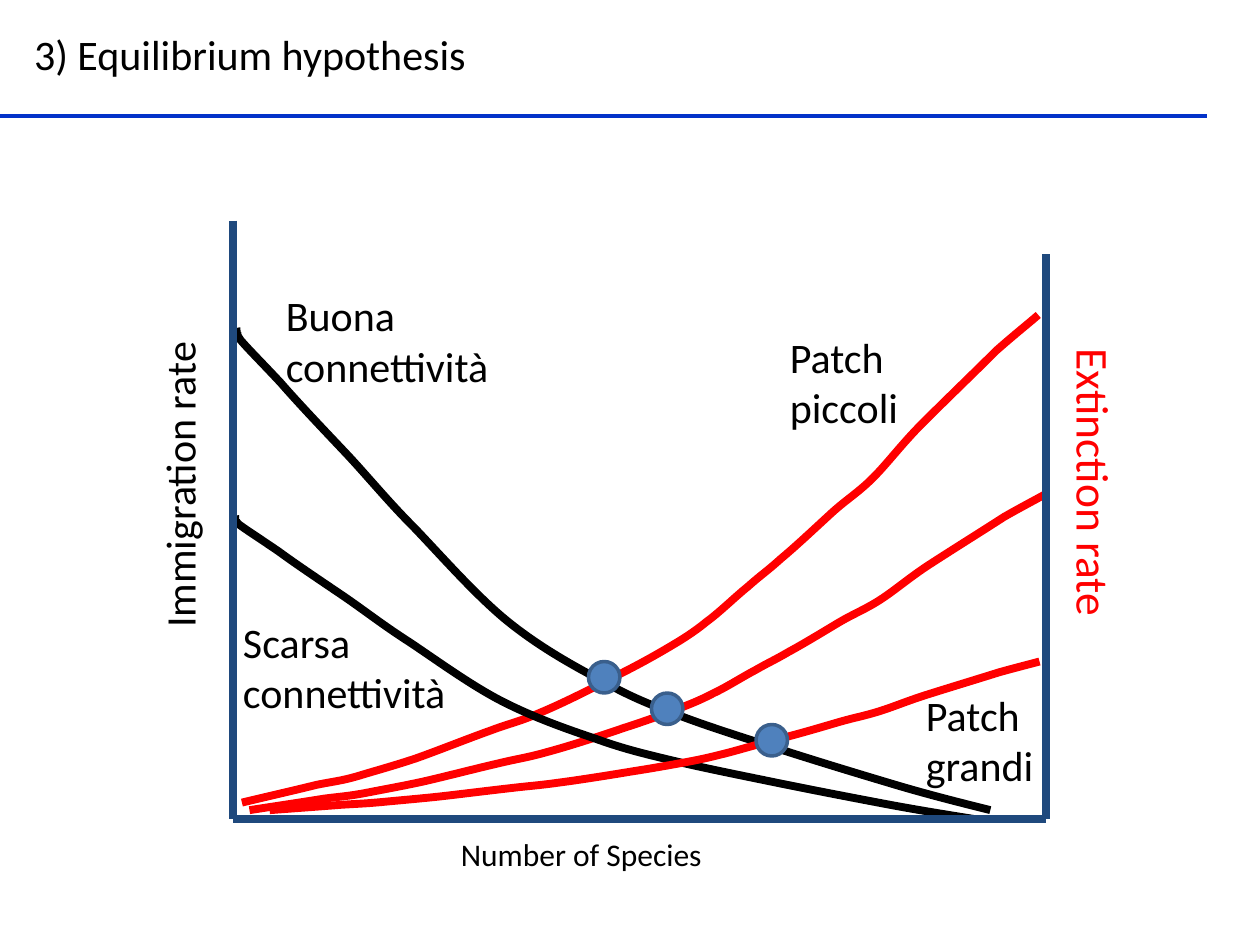
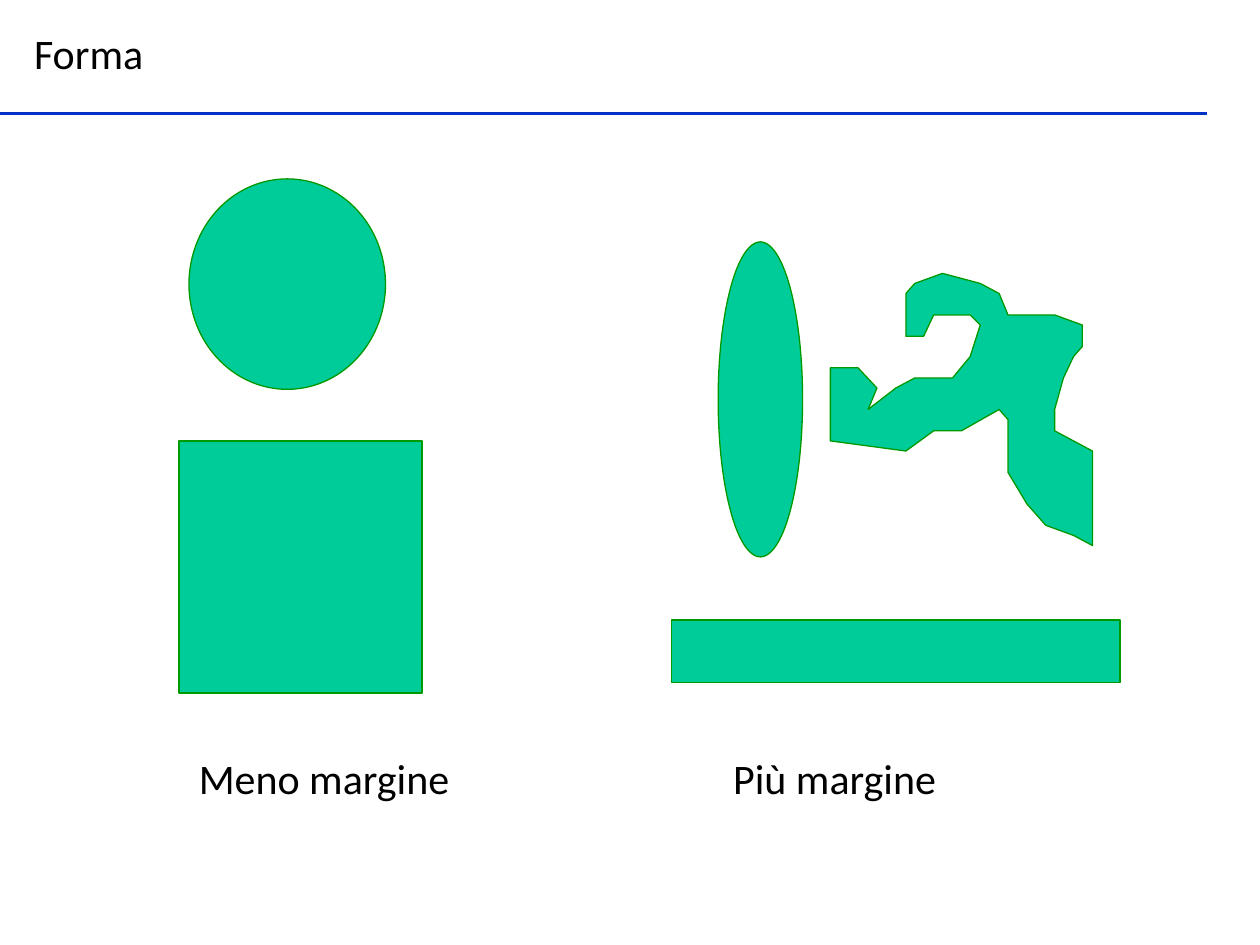
from dataclasses import dataclass
from typing import NamedTuple

from lxml import etree
from pptx import Presentation
from pptx import util as u
from pptx.dml.color import RGBColor
from pptx.enum import shapes, text
from pptx.oxml import ns

PX = 9144


@dataclass(frozen=True)
class Theme:
    font: str = "Calibri"
    ink: str = "000000"
    red: str = "FF0000"
    rule: str = "0332C9"
    axis: str = "1F497D"
    dot: str = "4F81BD"
    rim: str = "3A5F8C"
    patch: str = "00CC99"
    edge: str = "009900"
    small: int = 18
    main: int = 24
    large: int = 26
    thick: float = 4.5
    mid: float = 2
    thin: float = 0.75


T = Theme()


class Box(NamedTuple):
    x: int
    y: int
    w: int
    h: int


class Label(NamedTuple):
    words: str
    box: Box
    size: int = T.main
    color: str = T.ink
    turn: int = 0


class Curve(NamedTuple):
    knots: list
    box: Box
    color: str


class Form(NamedTuple):
    kind: shapes.MSO_SHAPE
    box: Box


Points = list[tuple[float, float]]
OVAL = shapes.MSO_SHAPE.OVAL
RECT = shapes.MSO_SHAPE.RECTANGLE

RISE = [(0, 386),
        (21, 381), (43, 376), (59, 372), (74, 369), (78, 369), (92, 365),
        (105, 361), (120, 357), (138, 351), (155, 345), (180, 335), (197, 329),
        (213, 323), (220, 322), (236, 315), (253, 308), (279, 295), (296, 286),
        (312, 278), (323, 272), (335, 265), (347, 258), (357, 252), (368, 243),
        (379, 235), (391, 223), (401, 215), (411, 206), (416, 203), (427, 193),
        (438, 184), (455, 168), (467, 157), (479, 146), (488, 141), (500, 129),
        (512, 117), (523, 102), (539, 86), (556, 69), (583, 43), (598, 28),
        (614, 14), (623, 7), (631, 0)]
FALL = [(5, 0),
        (3, 0), (0, 0), (5, 7), (11, 14), (23, 26), (37, 41),
        (50, 56), (69, 76), (87, 95), (105, 114), (121, 134), (143, 156),
        (165, 179), (193, 211), (218, 231), (243, 251), (270, 266), (293, 278),
        (316, 291), (332, 297), (356, 306), (380, 315), (409, 324), (437, 333),
        (465, 342), (498, 352), (525, 360), (552, 368), (576, 374), (600, 380)]

CURVES = [
    Curve(RISE, Box(192, 250, 632, 387), T.red),
    Curve(RISE, Box(198, 392, 632, 251), T.red),
    Curve(FALL, Box(186, 263, 600, 380), T.ink),
    Curve(FALL, Box(185, 412, 588, 238), T.ink),
]
LOW = Curve(RISE, Box(214, 525, 611, 118), T.red)
AXES = [(185, 175, 185, 650), (830, 202, 830, 650), (185, 650, 830, 650)]
NOTES = [
    Label("Number of Species", Box(356, 658, 304, 40), T.small),
    Label("Immigration rate", Box(-4, 337, 292, 50), turn=270),
    Label("Extinction rate", Box(731, 377, 275, 54), T.large, T.red, 90),
    Label("Buona connettività", Box(217, 225, 259, 91)),
    Label("Scarsa connettività", Box(183, 484, 192, 91)),
    Label("Patch piccoli", Box(617, 258, 158, 91)),
    Label("Patch grandi", Box(725, 542, 158, 91)),
]
DOTS = [(467, 525), (517, 550), (600, 575)]

FORMS = [
    Form(OVAL, Box(150, 142, 156, 167)),
    Form(RECT, Box(142, 350, 193, 200)),
    Form(OVAL, Box(570, 192, 67, 250)),
    Form(RECT, Box(533, 492, 356, 50)),
]
BLOB = [(867, 433), (867, 358), (837, 342), (837, 325), (844, 300), (852, 283),
        (859, 275), (859, 258), (837, 250), (815, 250), (800, 250), (793, 233),
        (778, 225), (748, 217), (726, 225), (719, 233), (719, 267), (733, 267),
        (741, 250), (770, 250), (778, 258), (770, 283), (756, 300), (741, 300),
        (726, 300), (711, 308), (689, 325), (696, 308), (681, 292), (659, 292),
        (659, 317), (659, 350), (719, 358), (741, 342), (763, 342), (793, 325),
        (800, 333), (800, 358), (800, 375), (815, 400), (830, 417), (852, 425)]
SIDES = [
    Label("Meno margine", Box(148, 592, 244, 50)),
    Label("Più margine", Box(572, 592, 244, 50)),
]


def emu(*vals: float) -> list[int]:
    return [round(v * PX) for v in vals]


def tint(name: str) -> RGBColor:
    return RGBColor.from_string(name)


def style(shape, fill: str | None, line: str, width: float) -> None:
    shape.shadow.inherit = False
    if fill:
        shape.fill.solid()
        shape.fill.fore_color.rgb = tint(fill)
    else:
        shape.fill.background()
    shape.line.color.rgb = tint(line)
    shape.line.width = u.Pt(width)


def write(frame, words: str, size: int, color: str) -> None:
    frame.text = words
    frame.word_wrap = True
    frame.auto_size = text.MSO_AUTO_SIZE.SHAPE_TO_FIT_TEXT
    para = frame.paragraphs[0]
    para.alignment = text.PP_ALIGN.LEFT
    font = para.runs[0].font
    font.name, font.size = T.font, u.Pt(size)
    font.color.rgb = tint(color)


def label(slide, item: Label) -> None:
    box = slide.shapes.add_textbox(*emu(*item.box))
    box.rotation = item.turn
    write(box.text_frame, item.words, item.size, item.color)


def line(slide, ends: tuple, color: str, width: float) -> None:
    link = slide.shapes.add_connector(shapes.MSO_CONNECTOR.STRAIGHT, *emu(*ends))
    link.line.color.rgb = tint(color)
    link.line.width = u.Pt(width)
    etree.SubElement(link._element.spPr, ns.qn("a:effectLst"))


def form(slide, item: Form, fill: str, edge: str, width: float) -> None:
    style(slide.shapes.add_shape(item.kind, *emu(*item.box)), fill, edge, width)


def trace(slide, pts: Points, close: bool = False):
    first, *rest = [emu(*p) for p in pts]
    pen = slide.shapes.build_freeform(*first, scale=1.0)
    pen.add_line_segments(rest, close=close)
    return pen.convert_to_shape()


def bend(shape) -> None:
    legs = list(shape._element.iter(ns.qn("a:lnTo")))
    for trio in zip(legs[::3], legs[1::3], legs[2::3]):
        arc = etree.Element(ns.qn("a:cubicBezTo"))
        trio[0].addprevious(arc)
        for leg in trio:
            arc.append(leg[0])
            leg.getparent().remove(leg)


def curve(slide, item: Curve) -> None:
    wide = max(x for x, _ in item.knots)
    high = max(y for _, y in item.knots)
    box = item.box
    shape = trace(slide, [(box.x + x * box.w / wide, box.y + y * box.h / high)
                          for x, y in item.knots])
    bend(shape)
    style(shape, None, item.color, T.thick)


def dot(slide, x: int, y: int) -> None:
    form(slide, Form(OVAL, Box(x, y, 25, 25)), T.dot, T.rim, T.mid)


def start(deck, words: str, top: int, rule: int):
    slide = deck.slides.add_slide(deck.slide_layouts[5])
    line(slide, (0, rule, 958, rule), T.rule, T.mid)
    title = slide.shapes.title
    title.left, title.top, title.width, title.height = emu(17, top, 850, 50)
    write(title.text_frame, words, T.main, T.ink)
    title.text_frame.vertical_anchor = text.MSO_ANCHOR.MIDDLE
    props = title.text_frame.paragraphs[0]._p.get_or_add_pPr()
    props.set("marL", str(50 * PX))
    props.set("indent", str(-50 * PX))
    return slide


def rates(deck) -> None:
    slide = start(deck, "3) Equilibrium hypothesis", 18, 92)
    for item in CURVES:
        curve(slide, item)
    for ends in AXES:
        line(slide, ends, T.axis, T.thick)
    for note in NOTES:
        label(slide, note)
    *early, last = DOTS
    for spot in early:
        dot(slide, *spot)
    curve(slide, LOW)
    dot(slide, *last)


def outlines(deck) -> None:
    slide = start(deck, "Forma", 17, 90)
    for item in FORMS:
        form(slide, item, T.patch, T.edge, T.thin)
    style(trace(slide, BLOB, True), T.patch, T.edge, T.thin)
    for side in SIDES:
        label(slide, side)


def main() -> None:
    deck = Presentation()
    deck.slide_width, deck.slide_height = emu(1000, 750)
    rates(deck)
    outlines(deck)
    deck.save("out.pptx")


if __name__ == "__main__":
    main()
